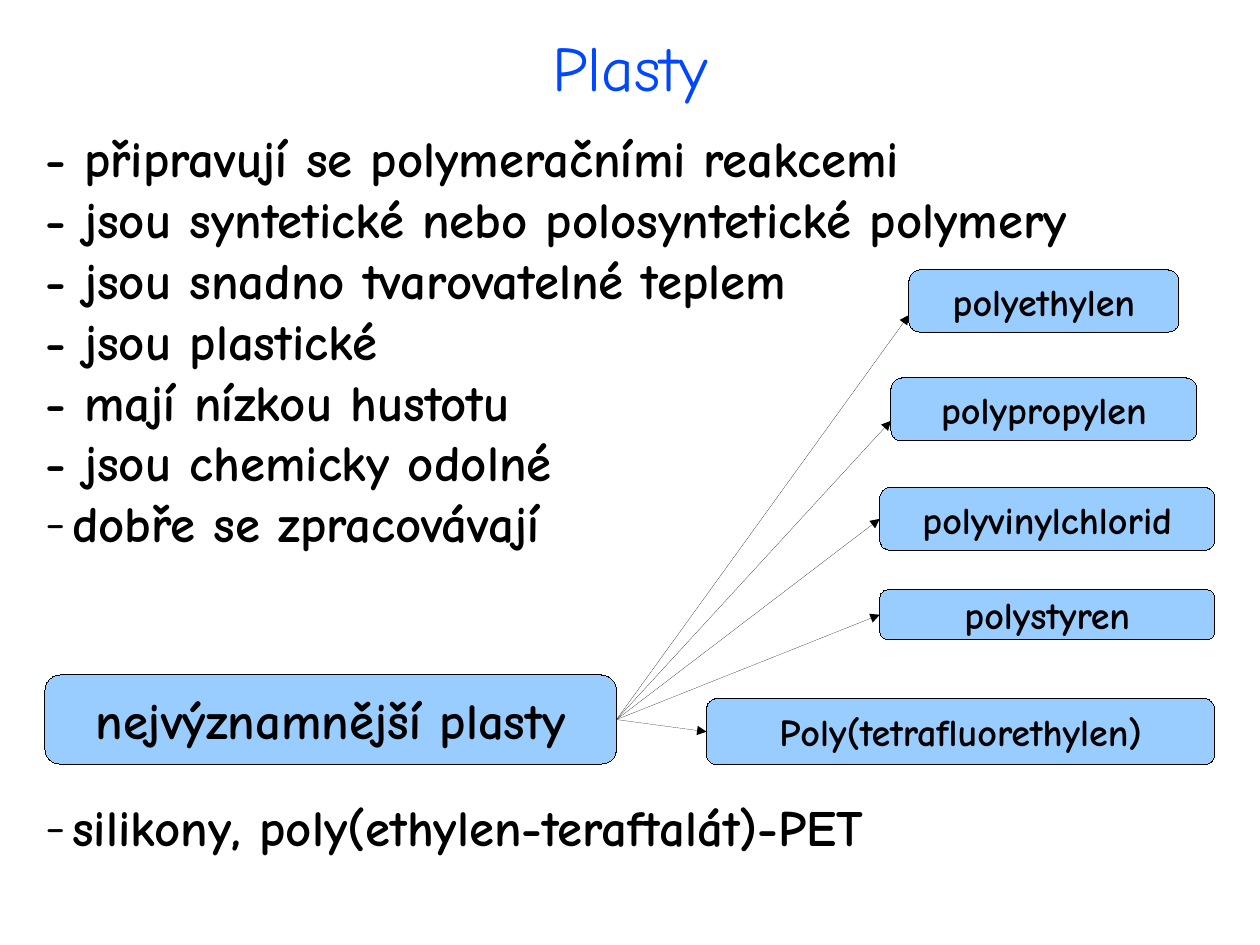
"""Build a slide on plastics: traits on the left, key kinds fanned out on the right."""
import pptx
import pptx.dml.color
import pptx.enum.shapes
import pptx.enum.text
import pptx.oxml
import pptx.oxml.ns
import pptx.util

RGB = pptx.dml.color.RGBColor
BLUE = RGB(0x00, 0x47, 0xFF)
BLACK = RGB(0x00, 0x00, 0x00)
SKY = RGB(0x99, 0xCC, 0xFF)

ALIGN = pptx.enum.text.PP_ALIGN
ANCHOR = pptx.enum.text.MSO_ANCHOR
FIT = pptx.enum.text.MSO_AUTO_SIZE
SHAPE = pptx.enum.shapes.MSO_SHAPE
LINE = pptx.enum.shapes.MSO_CONNECTOR

COLS, ROWS = 28, 21
WIDE, HIGH = pptx.util.Cm(COLS), pptx.util.Cm(ROWS)
LEFT, RIGHT = 1, 3

TRAITS = [
    "- připravují se polymeračními reakcemi",
    "- jsou syntetické nebo polosyntetické polymery",
    "- jsou snadno tvarovatelné teplem",
    "- jsou plastické",
    "- mají nízkou hustotu",
    "- jsou chemicky odolné",
]
DASHED = [("dobře se zpracovávají", 0), ("silikony, poly(ethylen-teraftalát)-PET", 153)]

KINDS = [
    ("polyethylen", (20.2, 6, 6, 1.38), 7),
    ("polypropylen", (19.8, 8.4, 6.8, 1.4), 9.35),
    ("polyvinylchlorid", (19.55, 10.83, 7.45, 1.4), None),
    ("polystyren", (19.55, 13.1, 7.45, 1.12), None),
    ("Poly(tetrafluorethylen)", (15.7, 15.52, 11.3, 1.48), None),
]


def across(col):
    """Turn grid columns into a length."""
    return int(WIDE * col / COLS)


def down(row):
    """Turn grid rows into a length."""
    return int(HIGH * row / ROWS)


def apply(item, **values):
    """Set each given attribute on the item."""
    for name, value in values.items():
        setattr(item, name, value)


def cell(col, row, cols, rows):
    """Give the place of a grid area as a dict."""
    return {"left": across(col), "top": down(row),
            "width": across(cols), "height": down(rows)}


def element(parent, tag, **values):
    """Append a drawing element with the given attributes."""
    node = pptx.oxml.parse_xml(f"<a:{tag} {pptx.oxml.ns.nsdecls('a')}/>")
    for name, value in values.items():
        node.set(name, str(value))
    parent.append(node)


def edge(shape):
    """Draw the shape with a plain black line in place of the theme style."""
    shape._element.remove(shape._element.find(pptx.oxml.ns.qn("p:style")))
    shape.line.color.rgb = BLACK


def write(para, text, size, color=BLACK, bold=True, align=ALIGN.LEFT):
    """Put one formatted run into the paragraph."""
    para.alignment = align
    run = para.add_run()
    run.text = text
    apply(run.font, name="Comic Neue", size=pptx.util.Pt(size), bold=bold)
    run.font.color.rgb = color


def bullet(para, mark=None):
    """Give the paragraph a hanging mark, or none."""
    props = para._p.get_or_add_pPr()
    hang = across(0.6) if mark else 0
    props.set("marL", str(hang))
    props.set("indent", str(-hang))
    if mark:
        element(props, "buFont", typeface="Comic Neue")
        element(props, "buChar", char=mark)
    else:
        element(props, "buNone")


def holder(shape, area):
    """Move a placeholder and return its plain text frame."""
    apply(shape, **cell(*area))
    frame = shape.text_frame
    apply(frame, word_wrap=True, auto_size=FIT.NONE, vertical_anchor=ANCHOR.TOP)
    return frame


def traits(shape):
    """Fill the body with the list of traits."""
    frame = holder(shape, (0.75, 2.68, 26.5, 16.66))
    items = [(text, 0, None) for text in TRAITS]
    items += [(text, gap, "-") for text, gap in DASHED]
    for index, (text, gap, mark) in enumerate(items):
        para = frame.add_paragraph() if index else frame.paragraphs[0]
        para.space_before = pptx.util.Pt(gap)
        bullet(para, mark)
        write(para, text, 32)


def box(slide, text, area, size):
    """Add a rounded box with centred text."""
    shape = slide.shapes.add_shape(SHAPE.ROUNDED_RECTANGLE, **cell(*area))
    shape.adjustments[0] = 0.17
    shape.shadow.inherit = False
    shape.fill.solid()
    shape.fill.fore_color.rgb = SKY
    edge(shape)
    frame = shape.text_frame
    apply(frame, word_wrap=False, vertical_anchor=ANCHOR.MIDDLE)
    write(frame.paragraphs[0], text, size, align=ALIGN.CENTER)
    return shape


def arrow(slide, start, end, row):
    """Point from one box to the left side of another, at a row or its middle."""
    tip = down(row) if row else end.top + end.height // 2
    line = slide.shapes.add_connector(
        LINE.STRAIGHT, start.left + start.width, start.top + start.height // 2,
        end.left, tip)
    line.begin_connect(start, RIGHT)
    if row is None:
        line.end_connect(end, LEFT)
    edge(line)
    element(line.line._get_or_add_ln(), "tailEnd", type="triangle")
    element(line._element.spPr, "effectLst")


def main():
    """Build and save the slide."""
    deck = pptx.Presentation()
    deck.slide_width = WIDE
    deck.slide_height = HIGH
    slide = deck.slides.add_slide(deck.slide_layouts[1])
    title, body = slide.placeholders
    head = holder(title, (4, 0.5, 20, 2.2))
    write(head.paragraphs[0], "Plasty", 40, BLUE, False, ALIGN.CENTER)
    traits(body)
    root = box(slide, "nejvýznamnější plasty", (1, 15, 12.7, 1.98), 32)
    for text, area, row in KINDS:
        arrow(slide, root, box(slide, text, area, 24), row)
    deck.save("out.pptx")


if __name__ == "__main__":
    main()
